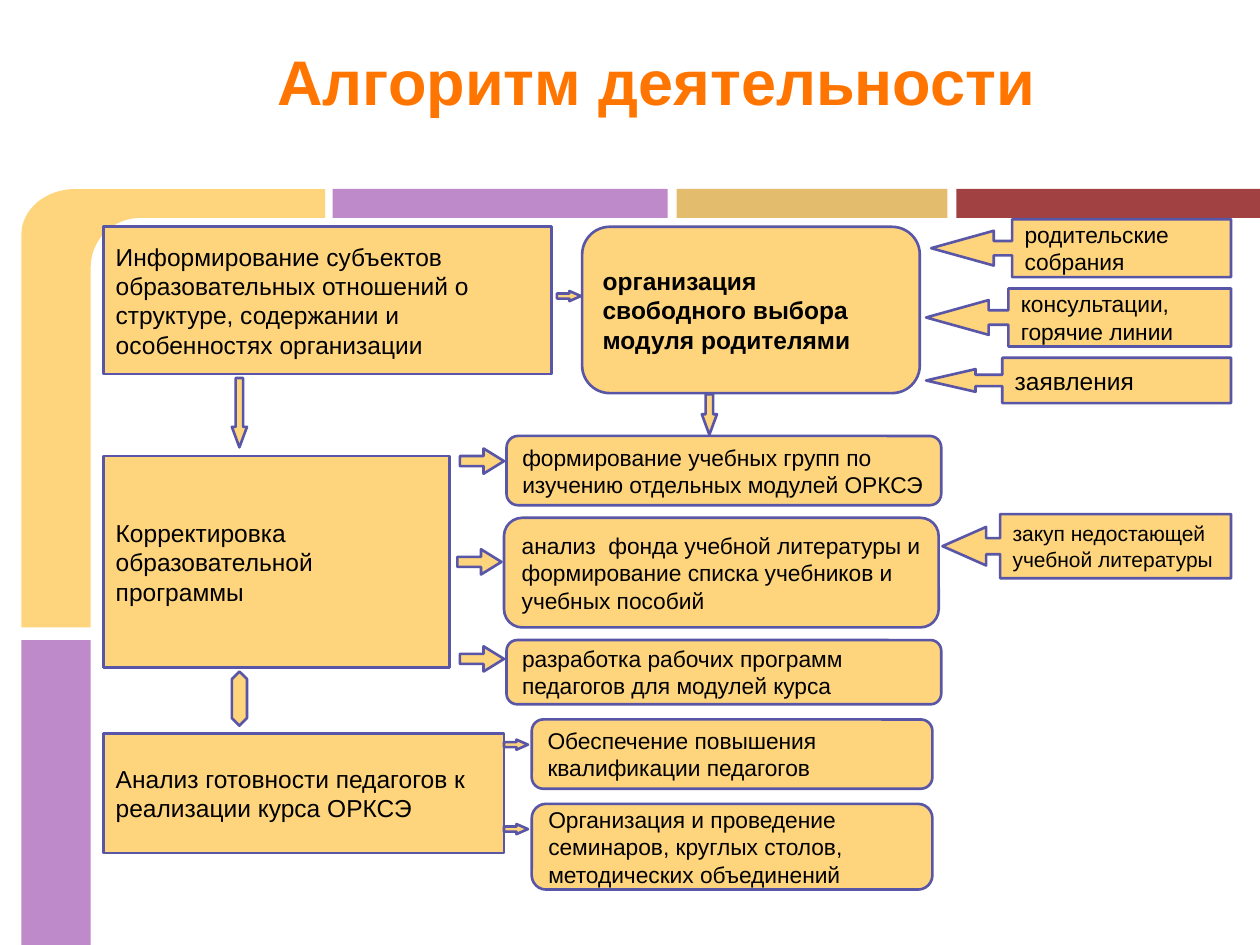
from math import cos, pi, sin

from pptx import Presentation
from pptx.dml.color import RGBColor
from pptx.enum.shapes import MSO_SHAPE as Kind
from pptx.enum.text import MSO_ANCHOR as Anchor, PP_ALIGN as Align
from pptx.util import Inches, Pt

SAND, EDGE, LILAC = "FED47D", "5956A7", "BF8AC9"
FRAME = {
    "word_wrap": True,
    "margin_left": Inches(0.1),
    "margin_right": Inches(0.1),
    "margin_top": Inches(0.1),
    "margin_bottom": Inches(0.1),
}


def assign(item, values):
    for name, value in values.items():
        setattr(item, name, value)


def paint(target, color):
    """Set a solid colour on a fill."""
    target.solid()
    target.fore_color.rgb = RGBColor.from_string(color)


def finish(shape, color, edge=None):
    shape.shadow.inherit = False
    paint(shape.fill, color)
    if edge:
        paint(shape.line.fill, edge)
        shape.line.width = Pt(1.5)
    else:
        shape.line.fill.background()


def write(shape, text, size, color="000000", bold=False,
          align=Align.LEFT, anchor=Anchor.MIDDLE):
    frame = shape.text_frame
    assign(frame, {**FRAME, "vertical_anchor": anchor})
    para = frame.paragraphs[0]
    para.alignment = align
    run = para.add_run()
    run.text = text
    assign(run.font, {"name": "Arial", "size": Pt(size), "bold": bold})
    run.font.color.rgb = RGBColor.from_string(color)


def add_form(slide, kind, box, color=SAND, edge=EDGE, adj=()):
    shape = slide.shapes.add_shape(kind, *map(Inches, box))
    for i, value in enumerate(adj):
        shape.adjustments[i] = value
    finish(shape, color, edge)
    return shape


def add_box(slide, kind, box, text, size, bold=False, adj=()):
    write(add_form(slide, kind, box, adj=adj), text, size, bold=bold)


def arc(x, y, rx, ry, start, end, steps=16):
    """Points on an ellipse between two angles given in quarter turns."""
    turns = [(start + (end - start) * i / steps) * pi / 2
             for i in range(steps + 1)]
    return [(x + rx * cos(t), y + ry * sin(t)) for t in turns]


def add_bend(slide):
    """Draw the rounded corner band."""
    outer = arc(0.6, 1.86, 0.43, 0.36, 2, 3)
    inner = arc(1.11, 2.12, 0.39, 0.39, 3, 2)
    points = [(0.72, 4.98), (0.17, 4.98), *outer,
              (2.58, 1.5), (2.58, 1.73), *inner]
    spots = [(Inches(x), Inches(y)) for x, y in points]
    pen = slide.shapes.build_freeform(*spots[0])
    pen.add_line_segments(spots[1:], close=True)
    finish(pen.convert_to_shape(), SAND)


def add_decor(slide):
    add_bend(slide)
    add_form(slide, Kind.RECTANGLE, (0.17, 5.08, 0.55, 2.42), LILAC, None)
    for left, width, color in [(2.64, 2.66, LILAC), (5.37, 2.15, "E3BC6D"),
                               (7.59, 2.41, "A14141")]:
        add_form(slide, Kind.RECTANGLE, (left, 1.5, width, 0.23), color, None)


def add_title(slide):
    box = slide.shapes.add_textbox(*map(Inches, (0.93, 0.24, 8.56, 0.73)))
    write(box, "Алгоритм деятельности", 36, "FF7500", True,
          Align.CENTER, Anchor.TOP)


def add_steps(slide):
    # Main steps on the left
    for top, width, height, text in [
        (1.8, 3.56, 1.17, "Информирование субъектов образовательных отношений "
                          "о структуре, содержании и особенностях организации"),
        (3.62, 2.75, 1.68, "Корректировка образовательной программы"),
        (5.82, 3.18, 0.95,
         "Анализ готовности педагогов к реализации курса ОРКСЭ"),
    ]:
        add_box(slide, Kind.RECTANGLE, (0.82, top, width, height), text, 14)

    # Rounded boxes in the middle
    add_box(slide, Kind.ROUNDED_RECTANGLE, (4.62, 1.8, 2.68, 1.32),
            "организация свободного выбора модуля родителями", 14, True)
    for left, top, width, height, text in [
        (4.02, 3.46, 3.45, 0.55,
         "формирование учебных групп по изучению отдельных модулей ОРКСЭ"),
        (4, 4.11, 3.45, 0.87, "анализ  фонда учебной литературы и "
                              "формирование списка учебников и учебных пособий"),
        (4.02, 5.08, 3.45, 0.51,
         "разработка рабочих программ педагогов для модулей курса"),
        (4.22, 5.71, 3.18, 0.55,
         "Обеспечение повышения квалификации педагогов"),
        (4.22, 6.38, 3.18, 0.68, "Организация и проведение семинаров, "
                                 "круглых столов, методических объединений"),
    ]:
        add_box(slide, Kind.ROUNDED_RECTANGLE, (left, top, width, height),
                text, 13)


def add_notes(slide):
    """Callouts that share one right edge."""
    right = 9.77
    for left, top, height, text, size, adj in [
        (7.39, 1.74, 0.46, "родительские собрания", 13, (0.25, 0.3, 1.08, 0.73)),
        (7.35, 2.29, 0.46, "консультации, горячие линии", 13,
         (0.25, 0.3, 1.08, 0.73)),
        (7.35, 2.84, 0.36, "заявления", 14, (0.25, 0.25, 1.09, 0.75)),
        (7.48, 4.08, 0.51, "закуп недостающей учебной литературы", 12,
         (0.25, 0.3, 0.68, 0.8)),
    ]:
        add_box(slide, Kind.LEFT_ARROW_CALLOUT,
                (left, top, right - left, height), text, size, adj=adj)


def add_arrows(slide):
    for kind, width, height, adj, spots in [
        (Kind.DOWN_ARROW, 0.12, 0.55, (0.5, 1.35), [(1.84, 3)]),
        (Kind.DOWN_ARROW, 0.12, 0.32, (0.5, 1.35), [(5.57, 3.13)]),
        (Kind.UP_DOWN_ARROW, 0.12, 0.43, (0.5, 1.06), [(1.84, 5.33)]),
        (Kind.RIGHT_ARROW, 0.19, 0.08, (0.5, 1.14),
         [(4.42, 2.31), (4, 5.87), (4, 6.54)]),
        (Kind.RIGHT_ARROW, 0.35, 0.2, (0.4, 0.81),
         [(3.65, 3.56), (3.63, 4.36), (3.65, 5.13)]),
    ]:
        for left, top in spots:
            add_form(slide, kind, (left, top, width, height), adj=adj)


def main():
    deck = Presentation()
    assign(deck, {"slide_width": Inches(10), "slide_height": Inches(7.5)})
    slide = deck.slides.add_slide(deck.slide_layouts[6])
    for part in (add_decor, add_title, add_steps, add_notes, add_arrows):
        part(slide)
    deck.save("out.pptx")


if __name__ == "__main__":
    main()
